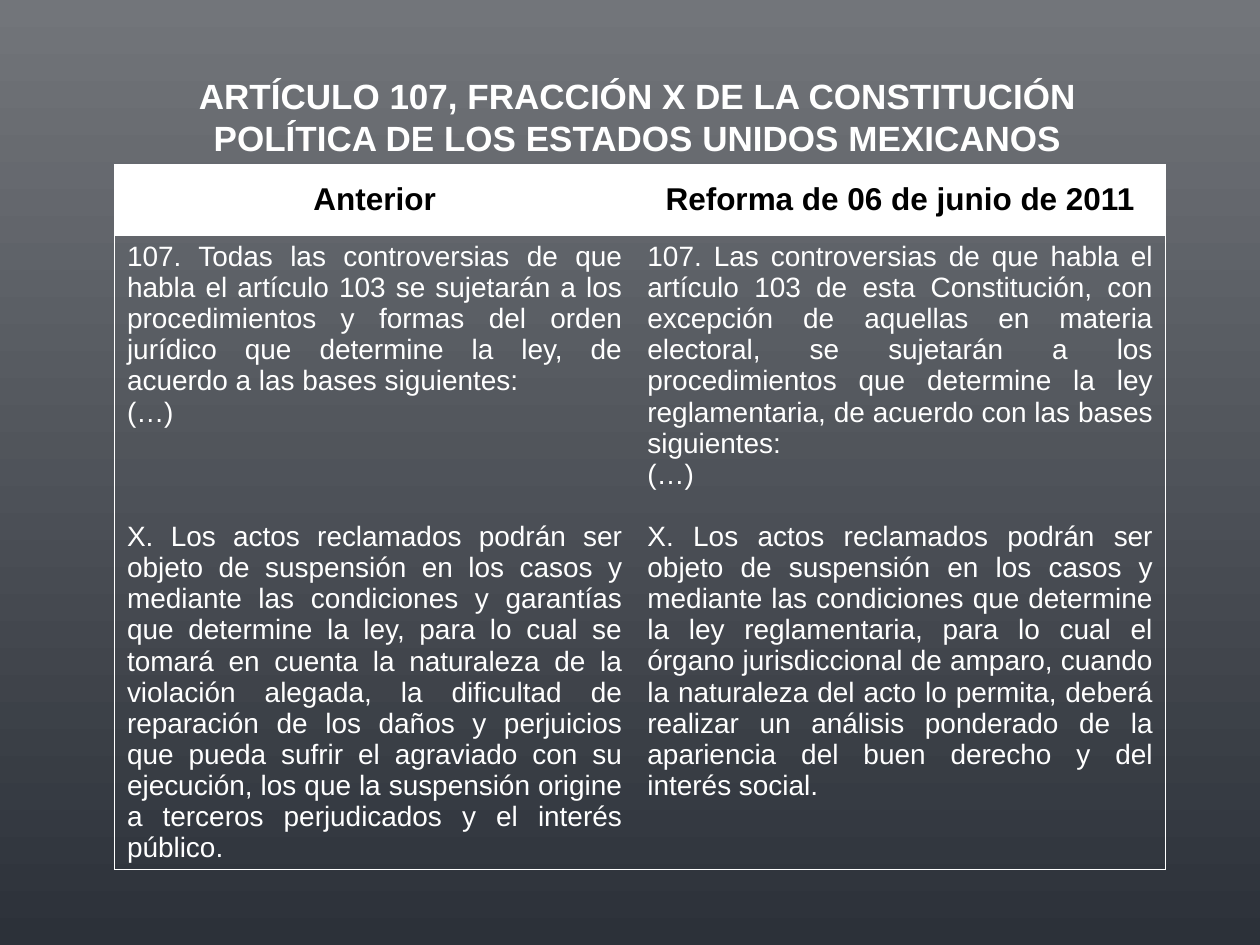
from dataclasses import dataclass

from lxml import etree
from pptx import Presentation
from pptx.dml.color import RGBColor
from pptx.enum.text import MSO_ANCHOR, MSO_AUTO_SIZE, PP_ALIGN
from pptx.oxml.ns import qn
from pptx.util import Pt

CENTER, JUSTIFY = PP_ALIGN.CENTER, PP_ALIGN.JUSTIFY
TOP, MIDDLE = MSO_ANCHOR.TOP, MSO_ANCHOR.MIDDLE
NO_AUTOFIT = MSO_AUTO_SIZE.NONE
TITLE_ONLY = 5


@dataclass(frozen=True)
class Theme:
    font: str = "Arial"
    light: str = "FFFFFF"
    dark: str = "000000"
    back_top: str = "72757A"
    back_bottom: str = "2C3139"
    title_size: float = 20
    header_size: float = 18
    body_size: float = 16
    border: float = 0.75


THEME = Theme()
TITLE = ("ARTÍCULO 107, FRACCIÓN X DE LA CONSTITUCIÓN POLÍTICA "
         "DE LOS ESTADOS UNIDOS MEXICANOS")
HEADERS = ["Anterior", "Reforma de 06 de junio de 2011"]
ARTICLES = [
    ["107. Todas las controversias de que habla el artículo 103 se sujetarán a los "
     "procedimientos y formas del orden jurídico que determine la ley, de acuerdo a "
     "las bases siguientes:",
     "(…)",
     "X. Los actos reclamados podrán ser objeto de suspensión en los casos y mediante "
     "las condiciones y garantías que determine la ley, para lo cual se tomará en "
     "cuenta la naturaleza de la violación alegada, la dificultad de reparación de los "
     "daños y perjuicios que pueda sufrir el agraviado con su ejecución, los que la "
     "suspensión origine a terceros perjudicados y el interés público."],
    ["107. Las controversias de que habla el artículo 103 de esta Constitución, con "
     "excepción de aquellas en materia electoral, se sujetarán a los procedimientos "
     "que determine la ley reglamentaria, de acuerdo con las bases siguientes:",
     "(…)",
     "X. Los actos reclamados podrán ser objeto de suspensión en los casos y mediante "
     "las condiciones que determine la ley reglamentaria, para lo cual el órgano "
     "jurisdiccional de amparo, cuando la naturaleza del acto lo permita, deberá "
     "realizar un análisis ponderado de la apariencia del buen derecho y del interés "
     "social."],
]
# Space before fraction X, so that it starts level in both columns
FRACTION_GAPS = [53.4, 17.8]
TABLE_LEFT, TABLE_TOP = 65.4, 94.3
COLUMN_WIDTHS = [297.4, 303.2]
ROW_HEIGHTS = [40, 362.4]


def paint_background(page):
    fill = page.background.fill
    fill.gradient()
    fill.gradient_angle = 270
    for stop, position, color in zip(fill.gradient_stops, (0, 1),
                                     (THEME.back_top, THEME.back_bottom)):
        stop.position = position
        stop.color.rgb = RGBColor.from_string(color)


def add_text(para, text, size, color, align, bold=False):
    para.alignment = align
    span = para.add_run()
    span.text = text
    span.font.name = THEME.font
    span.font.size = Pt(size)
    span.font.bold = bold
    span.font.color.rgb = RGBColor.from_string(color)


def add_title(page):
    box = page.shapes.title
    box.left, box.top, box.width, box.height = Pt(62.6), Pt(44), Pt(603.4), Pt(45.4)
    frame = box.text_frame
    frame.word_wrap = True
    frame.auto_size = NO_AUTOFIT
    frame.vertical_anchor = MIDDLE
    para = frame.paragraphs[0]
    para.line_spacing = 1.0
    add_text(para, TITLE, THEME.title_size, THEME.light, CENTER, bold=True)


def set_borders(cell, visible):
    """Draw the visible edges (letters out of LRTB) and hide the others."""
    properties = cell._tc.get_or_add_tcPr()
    for index, edge in enumerate("LRTB"):
        line = etree.Element(qn(f"a:ln{edge}"), w=str(Pt(THEME.border)))
        if edge in visible:
            fill = etree.SubElement(line, qn("a:solidFill"))
            etree.SubElement(fill, qn("a:srgbClr"), val=THEME.light)
        else:
            etree.SubElement(line, qn("a:noFill"))
        properties.insert(index, line)


def fill_header(cell, text):
    cell.fill.solid()
    cell.fill.fore_color.rgb = RGBColor.from_string(THEME.light)
    cell.vertical_anchor = MIDDLE
    add_text(cell.text_frame.paragraphs[0], text, THEME.header_size, THEME.dark,
             CENTER, bold=True)


def fill_article(cell, texts, fraction_gap):
    cell.fill.background()
    cell.vertical_anchor = TOP
    frame = cell.text_frame
    for index, text in enumerate(texts):
        para = frame.add_paragraph() if index else frame.paragraphs[0]
        add_text(para, text, THEME.body_size, THEME.light, JUSTIFY)
    para.space_before = Pt(fraction_gap)


def add_comparison(page):
    table = page.shapes.add_table(
        len(ROW_HEIGHTS), len(COLUMN_WIDTHS), Pt(TABLE_LEFT), Pt(TABLE_TOP),
        Pt(sum(COLUMN_WIDTHS)), Pt(sum(ROW_HEIGHTS))).table
    table.first_row = table.horz_banding = False
    for row, height in zip(table.rows, ROW_HEIGHTS):
        row.height = Pt(height)
    for index, side in enumerate("LR"):
        table.columns[index].width = Pt(COLUMN_WIDTHS[index])
        header, article = table.cell(0, index), table.cell(1, index)
        fill_header(header, HEADERS[index])
        fill_article(article, ARTICLES[index], FRACTION_GAPS[index])
        for cell in (header, article):
            set_borders(cell, side + "TB")


def main():
    deck = Presentation()
    deck.slide_width, deck.slide_height = Pt(720), Pt(540)
    page = deck.slides.add_slide(deck.slide_layouts[TITLE_ONLY])
    paint_background(page)
    add_title(page)
    add_comparison(page)
    deck.save("out.pptx")


if __name__ == "__main__":
    main()
